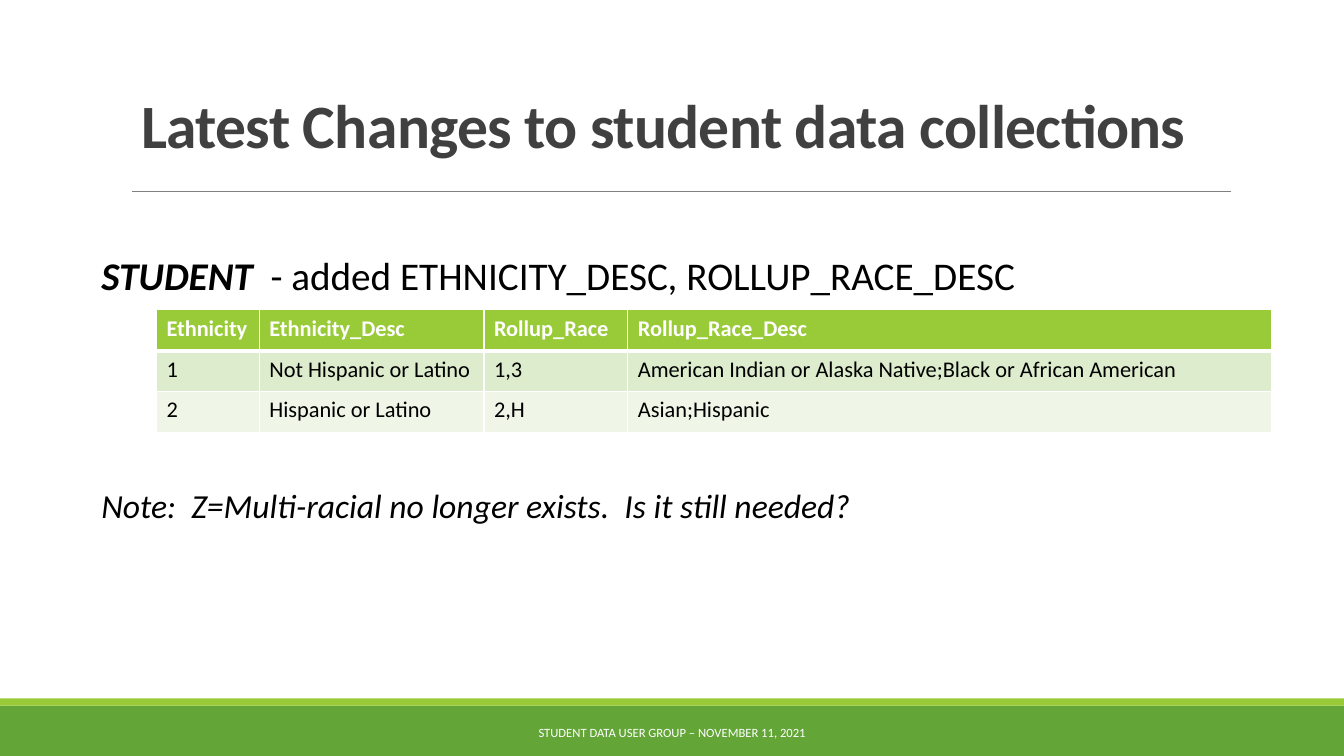
from dataclasses import dataclass

from lxml import etree
from pptx import Presentation
from pptx import util as u
from pptx.dml.color import RGBColor
from pptx.enum import shapes, text
from pptx.oxml import ns

EMU_PER_PX = 9525


@dataclass(frozen=True)
class Theme:
    font: str = "Calibri"
    title: str = "404040"
    ink: str = "000000"
    white: str = "FFFFFF"
    rule: str = "808080"
    green: str = "63A537"
    lime: str = "99CB38"
    bands: tuple[str, ...] = ("DEECCE", "EFF6E8")
    title_pt: int = 44
    lead_pt: int = 28
    note_pt: int = 24
    table_pt: int = 16
    footer_pt: int = 9


@dataclass(frozen=True)
class Box:
    x: int
    y: int
    w: int
    h: int

    def emu(self) -> list[u.Emu]:
        return [px(n) for n in (self.x, self.y, self.w, self.h)]


@dataclass(frozen=True)
class Bar:
    box: Box
    color: str


THEME = Theme()
SLIDE_W, SLIDE_H = 1280, 720
BARS = (
    Bar(Box(0, 672, SLIDE_W, 48), THEME.green),
    Bar(Box(0, 665, SLIDE_W, 7), THEME.lime),
)
TITLE_BOX = Box(125, 89, 1049, 69)
BODY_BOX = Box(87, 235, 1123, 330)
FOOTER_BOX = Box(387, 679, 506, 38)
RULE_X1, RULE_X2, RULE_Y = 126, 1172, 182
TABLE_X, TABLE_Y, ROW_H = 149, 295, 39
COLUMN_WIDTHS = (98, 214, 137, 613)
ROWS = (
    ("Ethnicity", "Ethnicity_Desc", "Rollup_Race", "Rollup_Race_Desc"),
    ("1", "Not Hispanic or Latino", "1,3",
     "American Indian or Alaska Native;Black or African American"),
    ("2", "Hispanic or Latino", "2,H", "Asian;Hispanic"),
)


def px(n: int) -> u.Emu:
    return u.Emu(n * EMU_PER_PX)


def rgb(color: str) -> RGBColor:
    return RGBColor.from_string(color)


def style(p, size: int, color: str, bold: bool | None = None,
          italic: bool | None = None) -> None:
    f = p.font
    f.name, f.size, f.bold, f.italic = THEME.font, u.Pt(size), bold, italic
    f.color.rgb = rgb(color)


def add_text_frame(s, box: Box, anchor: text.MSO_ANCHOR):
    tf = s.shapes.add_textbox(*box.emu()).text_frame
    tf.word_wrap = True
    tf.vertical_anchor = anchor
    return tf


def add_bar(s, bar: Bar) -> None:
    sp = s.shapes.add_shape(shapes.MSO_SHAPE.RECTANGLE, *bar.box.emu())
    sp.shadow.inherit = False
    sp.fill.solid()
    sp.fill.fore_color.rgb = rgb(bar.color)
    sp.line.fill.background()


def add_rule(s) -> None:
    line = s.shapes.add_connector(shapes.MSO_CONNECTOR.STRAIGHT, px(RULE_X1),
                                  px(RULE_Y), px(RULE_X2), px(RULE_Y))
    line.line.color.rgb = rgb(THEME.rule)
    line.line.width = u.Pt(0.5)
    etree.SubElement(line._element.spPr, ns.qn("a:effectLst"))


def add_title(s) -> None:
    p = add_text_frame(s, TITLE_BOX, text.MSO_ANCHOR.BOTTOM).paragraphs[0]
    p.line_spacing = 0.85
    style(p, THEME.title_pt, THEME.title, bold=True)
    r = p.add_run()
    r.text = "Latest Changes to student data collections"
    r._r.get_or_add_rPr().set("spc", "-50")


def add_body(s) -> None:
    tf = add_text_frame(s, BODY_BOX, text.MSO_ANCHOR.TOP)
    lead = tf.paragraphs[0]
    style(lead, THEME.lead_pt, THEME.ink)
    r = lead.add_run()
    r.text = "STUDENT  "
    r.font.bold = r.font.italic = True
    lead.add_run().text = "- added ETHNICITY_DESC, ROLLUP_RACE_DESC"

    note = tf.add_paragraph()
    note.space_before = u.Pt(133)
    style(note, THEME.note_pt, THEME.ink, italic=True)
    note.add_run().text = ("Note:  Z=Multi-racial no longer exists.  "
                           "Is it still needed?")


def add_footer(s) -> None:
    p = add_text_frame(s, FOOTER_BOX, text.MSO_ANCHOR.MIDDLE).paragraphs[0]
    p.alignment = text.PP_ALIGN.CENTER
    style(p, THEME.footer_pt, THEME.white)
    p.add_run().text = "STUDENT DATA USER GROUP – NOVEMBER 11, 2021"


def set_borders(cell, top: int, bottom: int) -> None:
    """Draw white borders; top and bottom widths are in points."""
    tc_pr = cell._tc.get_or_add_tcPr()
    widths = {"lnL": 1, "lnR": 1, "lnT": top, "lnB": bottom}
    for i, (tag, width) in enumerate(widths.items()):
        ln = etree.Element(ns.qn(f"a:{tag}"), w=str(u.Pt(width)))
        fill = etree.SubElement(ln, ns.qn("a:solidFill"))
        etree.SubElement(fill, ns.qn("a:srgbClr"), val=THEME.white)
        tc_pr.insert(i, ln)


def add_race_table(s) -> None:
    box = Box(TABLE_X, TABLE_Y, sum(COLUMN_WIDTHS), ROW_H * len(ROWS))
    table = s.shapes.add_table(len(ROWS), len(COLUMN_WIDTHS), *box.emu()).table
    for column, width in zip(table.columns, COLUMN_WIDTHS):
        column.width = px(width)
    fills = (THEME.lime, *THEME.bands)
    for i, (row, fill) in enumerate(zip(ROWS, fills)):
        header = i == 0
        for j, value in enumerate(row):
            cell = table.cell(i, j)
            cell.fill.solid()
            cell.fill.fore_color.rgb = rgb(fill)
            set_borders(cell, top=3 if i == 1 else 1, bottom=3 if header else 1)
            p = cell.text_frame.paragraphs[0]
            style(p, THEME.table_pt, THEME.white if header else THEME.ink,
                  bold=header)
            p.add_run().text = value


def main() -> None:
    prs = Presentation()
    prs.slide_width, prs.slide_height = px(SLIDE_W), px(SLIDE_H)
    s = prs.slides.add_slide(prs.slide_layouts[6])
    for bar in BARS:
        add_bar(s, bar)
    add_rule(s)
    add_title(s)
    add_body(s)
    add_footer(s)
    add_race_table(s)
    prs.save("out.pptx")


if __name__ == "__main__":
    main()
